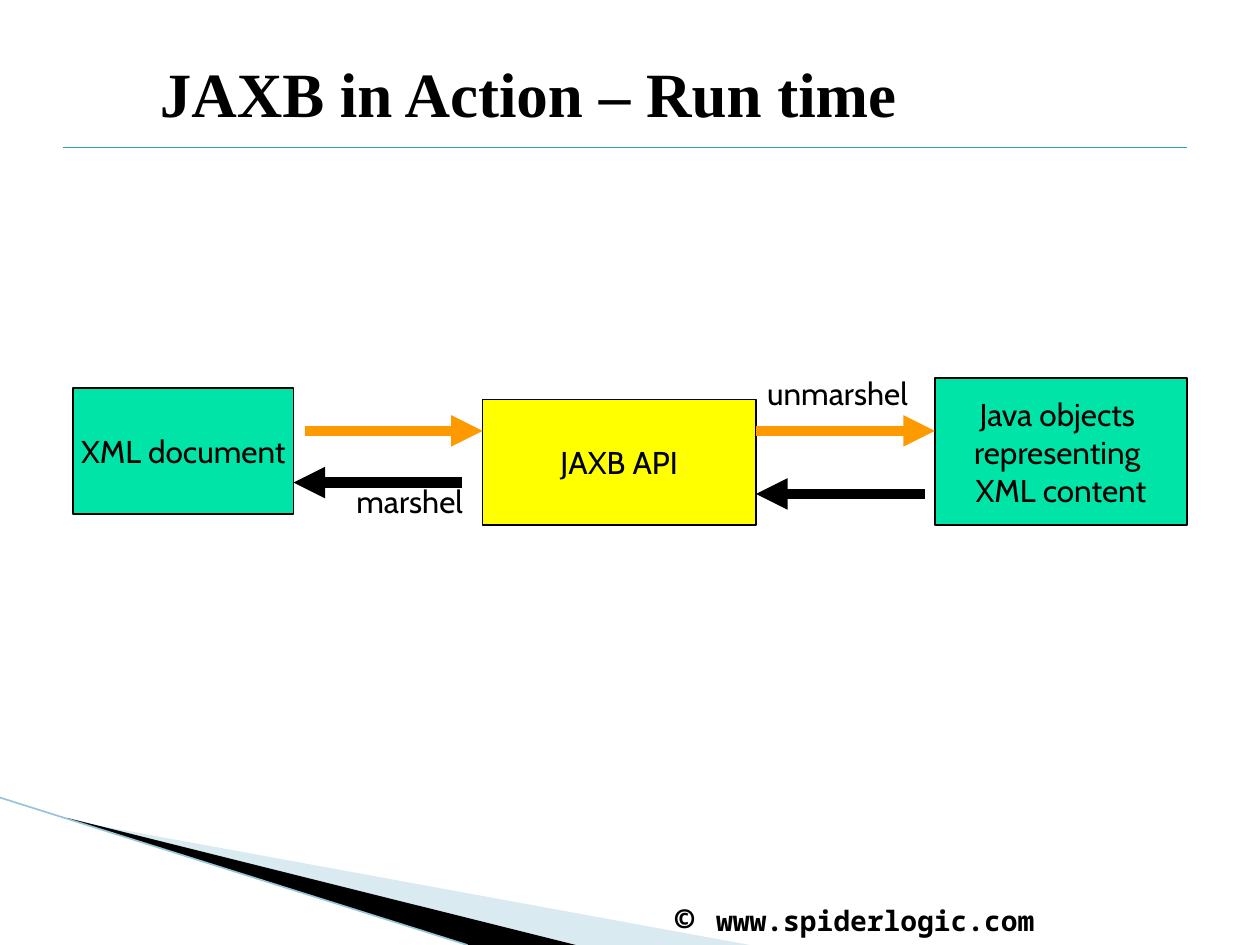
from pptx import Presentation
from pptx.dml.color import RGBColor
from pptx.enum.shapes import MSO_CONNECTOR, MSO_SHAPE
from pptx.enum.text import MSO_ANCHOR, PP_ALIGN
from pptx.oxml.ns import qn
from pptx.util import Inches, Pt
from lxml.etree import SubElement

BLACK = "000000"
GREEN = "00E4A8"
YELLOW = "FFFF00"
ORANGE = "FF9900"
BODY_FONT = "Cabin"


def paint(color_format, color):
    """Set a fill or font colour from a hex string."""
    color_format.rgb = RGBColor.from_string(color)


def style(font, name, size, bold=False):
    """Set black type in the given face and size."""
    font.name, font.size, font.bold = name, Pt(size), bold
    paint(font.color, BLACK)


def add_text(page, left, top, width, height, wrap=False):
    """Add an empty text box and return its frame."""
    box = page.shapes.add_textbox(Inches(left), Inches(top), Inches(width), Inches(height))
    box.text_frame.word_wrap = wrap
    return box.text_frame


def add_line(page, start, end, color, width, arrow=False):
    """Draw a straight line, with an arrowhead at its end if asked."""
    line = page.shapes.add_connector(
        MSO_CONNECTOR.STRAIGHT, *(Inches(value) for value in (*start, *end)))
    line.line.width = Pt(width)
    paint(line.line.color, color)
    if arrow:
        SubElement(line.line._get_or_add_ln(), qn("a:tailEnd"), type="triangle")
    SubElement(line._element.spPr, qn("a:effectLst"))


def add_wedge(page, left, top, points, color, alpha=100):
    """Fill a polygon whose points are relative to left and top."""
    corners = [(Inches(left + x), Inches(top + y)) for x, y in points]
    builder = page.shapes.build_freeform(*corners[0], scale=1.0)
    builder.add_line_segments(corners[1:], close=True)
    wedge = builder.convert_to_shape()
    wedge.shadow.inherit = False
    wedge.fill.solid()
    paint(wedge.fill.fore_color, color)
    wedge.line.fill.background()
    if alpha < 100:
        tint = wedge._element.spPr.find(".//" + qn("a:srgbClr"))
        SubElement(tint, qn("a:alpha"), val=str(alpha * 1000))


def add_swoosh(page, left, top, height):
    """Draw the corner decoration."""
    bottom = height - 0.17
    add_wedge(page, left + 0.55, top + 0.17,
              [(0, 0.01), (5.4, bottom), (4.01, bottom), (0, 0)], "A0CBDC", 40)
    add_wedge(page, left + 0.53, top + 0.16,
              [(0, 0), (4.04, height - 0.16), (3.19, height - 0.16), (0.01, 0.01)], BLACK)
    add_line(page, (left, top), (left + 3.71, top + height), "97C5D8", 0.95)


def add_footer(page, left, top, width, height):
    """Write the copyright line."""
    frame = add_text(page, left, top, width, height, wrap=True)
    frame.vertical_anchor = MSO_ANCHOR.BOTTOM
    frame.margin_left = Inches(0.27)
    para = frame.paragraphs[0]
    for text, size in (("© ", 20), ("www.spiderlogic.com", 16)):
        span = para.add_run()
        span.text = text
        style(span.font, "Noto Sans Mono", size, bold=True)


def add_title(page, left, top, width, height):
    """Write the title above its rule."""
    frame = add_text(page, left, top, width, height, wrap=True)
    frame.vertical_anchor = MSO_ANCHOR.MIDDLE
    frame.margin_top = Inches(0.1)
    para = frame.paragraphs[0]
    para.text = "JAXB in Action – Run time"
    style(para.font, "Times New Roman", 36, bold=True)
    rule = top + height + 0.09
    add_line(page, (0.5, rule), (9.42, rule), "2DA2BF", 1)


def add_node(page, left, top, width, height, color, lines):
    """Draw one outlined box with centred lines of text."""
    node = page.shapes.add_shape(
        MSO_SHAPE.RECTANGLE, Inches(left), Inches(top), Inches(width), Inches(height))
    node.shadow.inherit = False
    node.fill.solid()
    paint(node.fill.fore_color, color)
    node.line.width = Pt(1)
    paint(node.line.color, BLACK)
    frame = node.text_frame
    frame.word_wrap = False
    frame.vertical_anchor = MSO_ANCHOR.MIDDLE
    frame.text = "\n".join(lines)
    for para in frame.paragraphs:
        para.alignment = PP_ALIGN.CENTER
        style(para.font, BODY_FONT, 18)


def add_flow(page, left, top):
    """Draw the run-time flow between document, API and objects."""
    nodes = [
        (0, 0.08, 1.75, 1, GREEN, ["XML document"]),
        (3.25, 0.17, 2.17, 1, YELLOW, ["JAXB API"]),
        (6.84, 0, 2, 1.17, GREEN, ["Java objects ", "representing ", "XML content"]),
    ]
    for x, y, *rest in nodes:
        add_node(page, left + x, top + y, *rest)

    arrows = [
        (1.84, 3.25, 0.42, ORANGE),
        (5.42, 6.84, 0.42, ORANGE),
        (6.76, 5.42, 0.92, BLACK),
        (3.09, 1.75, 0.83, BLACK),
    ]
    for start, end, y, color in arrows:
        add_line(page, (left + start, top + y), (left + end, top + y), color, 6, arrow=True)

    for text, x, y, width in (("unmarshel", 5.41, -0.08, 1.36), ("marshel", 2.15, 0.78, 1.09)):
        para = add_text(page, left + x, top + y, width, 0.4).paragraphs[0]
        para.text = text
        style(para.font, BODY_FONT, 18)


def main():
    """Build and save the deck."""
    deck = Presentation()
    deck.slide_width, deck.slide_height = Inches(10), Inches(7.5)
    page = deck.slides.add_slide(deck.slide_layouts[6])
    add_swoosh(page, 0, 6.33, 1.17)
    add_footer(page, 5.08, 6.92, 3.58, 0.58)
    add_title(page, 1.17, 0.33, 8.33, 0.75)
    add_flow(page, 0.58, 3)
    deck.save("out.pptx")


if __name__ == "__main__":
    main()
